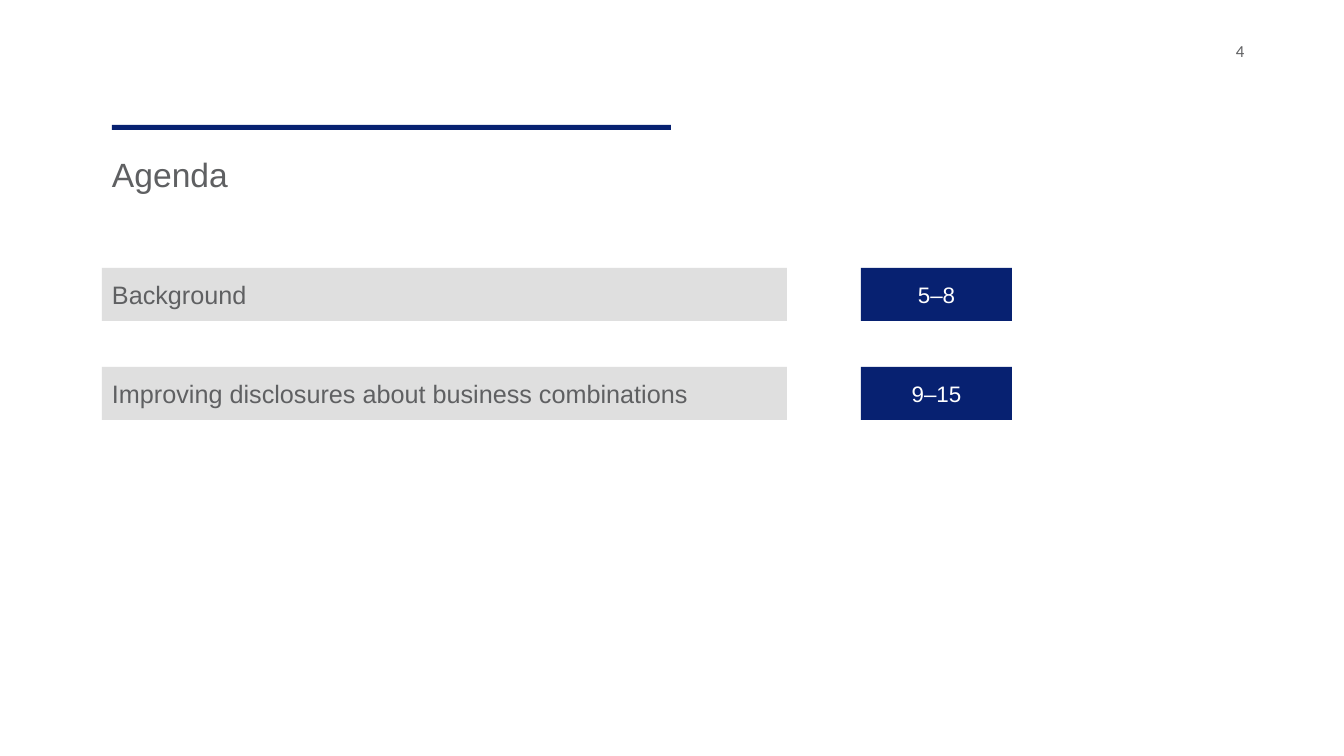
import pptx
import pptx.dml.color
import pptx.enum.shapes
import pptx.enum.text
import pptx.util

RGBColor = pptx.dml.color.RGBColor
Anchor = pptx.enum.text.MSO_ANCHOR
Align = pptx.enum.text.PP_ALIGN

NAVY = RGBColor(0x07, 0x21, 0x71)
GREY = RGBColor(0x5F, 0x60, 0x62)
SILVER = RGBColor(0xDF, 0xDF, 0xDF)
WHITE = RGBColor(0xFF, 0xFF, 0xFF)

PX_PER_INCH = 100.8


def px(length):
    return pptx.util.Emu(round(length * 914400 / PX_PER_INCH))


class AgendaPage:
    """Holds the text style and the current slide."""

    def __init__(self, page, font="Arial"):
        self.page = page
        self.font = font

    def place(self, shape, left, top, width, height):
        places = {"left": left, "top": top, "width": width, "height": height}
        for name, value in places.items():
            setattr(shape, name, px(value))

    def add_text(self, shape, text, size, color, align=Align.LEFT,
                 anchor=Anchor.MIDDLE, inset=10, font=None):
        frame = shape.text_frame
        frame_format = {"word_wrap": True, "vertical_anchor": anchor,
                        "auto_size": pptx.enum.text.MSO_AUTO_SIZE.NONE}
        for side in ("left", "top", "right", "bottom"):
            frame_format["margin_" + side] = px(inset)
        for name, value in frame_format.items():
            setattr(frame, name, value)
        para = frame.paragraphs[0]
        para.alignment = align
        span = para.add_run()
        span.text = text
        span.font.color.rgb = color
        font_format = {"name": font or self.font, "size": pptx.util.Pt(size)}
        for name, value in font_format.items():
            setattr(span.font, name, value)

    def title(self, text, *place):
        box = self.page.shapes.title
        self.place(box, *place)
        self.add_text(box, text, 24, GREY, anchor=Anchor.TOP)

    def label(self, text, *place):
        box = self.page.shapes.add_textbox(0, 0, 0, 0)
        self.place(box, *place)
        self.add_text(box, text, 12, GREY, anchor=Anchor.TOP, inset=0,
                      font="Calibri")

    def bar(self, fill, *place):
        box = self.page.shapes.add_shape(
            pptx.enum.shapes.MSO_SHAPE.RECTANGLE, 0, 0, 0, 0)
        self.place(box, *place)
        box.shadow.inherit = False
        box.fill.solid()
        box.fill.fore_color.rgb = fill
        box.line.fill.background()
        return box


def main():
    deck = pptx.Presentation()
    deck.slide_width, deck.slide_height = px(1344), px(756)
    agenda = AgendaPage(deck.slides.add_slide(deck.slide_layouts[5]))

    # Heading with its rule and the page number
    agenda.bar(NAVY, 112, 125, 559, 5)
    agenda.label("4", 1236, 41, 68, 29)
    agenda.title("Agenda", 102, 144, 1121, 85)

    # Topics with their slide ranges
    topics = [("Background", "5–8"),
              ("Improving disclosures about business combinations", "9–15")]
    for row, (topic, pages) in enumerate(topics):
        top = 268 + 99 * row
        badge = agenda.bar(NAVY, 861, top, 151, 53)
        agenda.add_text(badge, pages, 16, WHITE, align=Align.CENTER)
        strip = agenda.bar(SILVER, 102, top, 685, 53)
        agenda.add_text(strip, topic, 18, GREY)

    deck.save("out.pptx")


if __name__ == "__main__":
    main()
